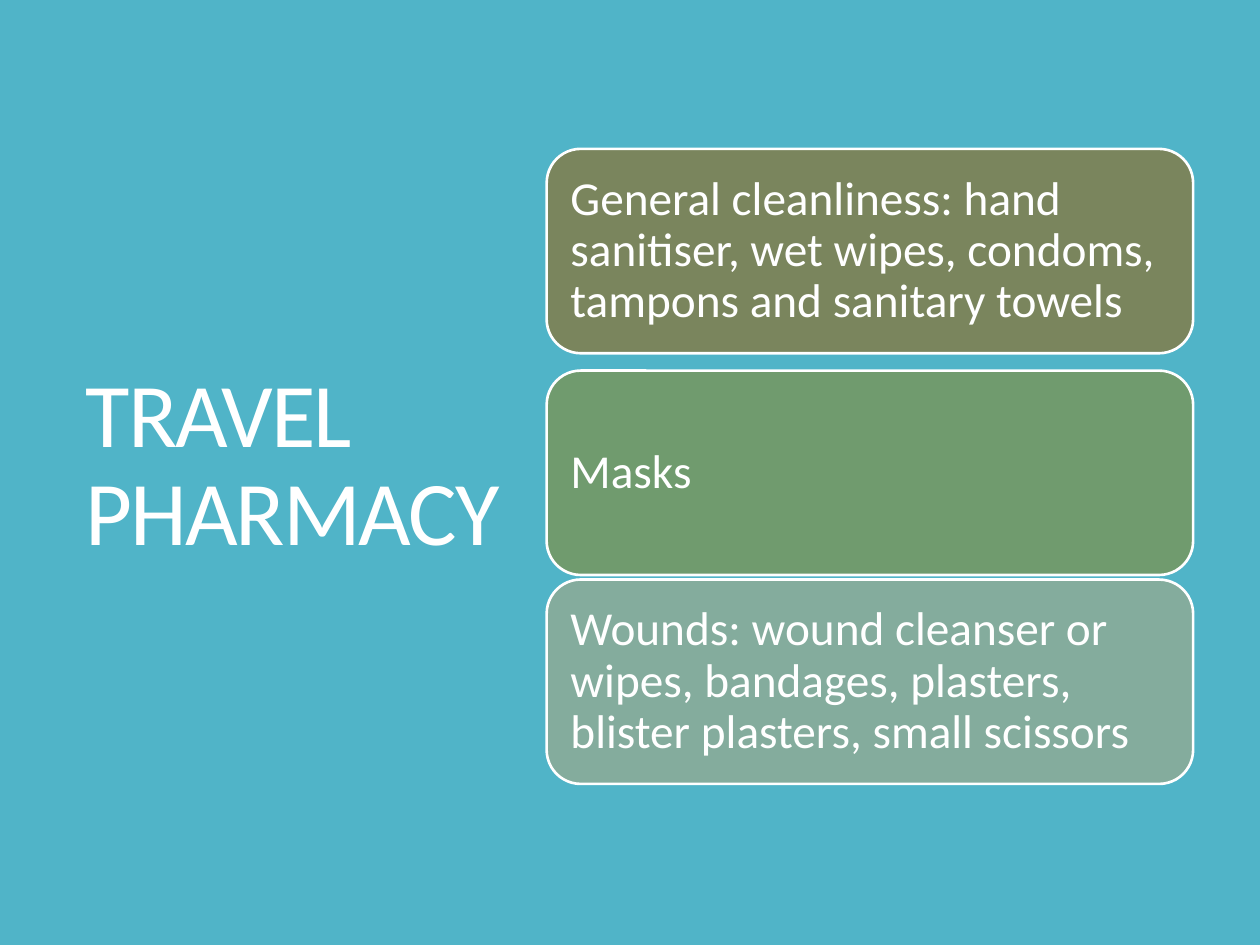
"""Build the travel pharmacy slide: a title beside three rounded cards."""
from dataclasses import dataclass

from pptx import Presentation
from pptx.dml.color import RGBColor
from pptx.enum.shapes import MSO_SHAPE
from pptx.enum.text import MSO_ANCHOR, PP_ALIGN
from pptx.util import Pt

ROUNDED = MSO_SHAPE.ROUNDED_RECTANGLE
MIDDLE = MSO_ANCHOR.MIDDLE
LEFT = PP_ALIGN.LEFT


@dataclass(frozen=True)
class Theme:
    font: str = "Calibri"
    background: str = "50B4C8"
    light: str = "FFFFFF"
    title_size: float = 52
    title_tracking: float = -1.2
    card_size: float = 27
    outline: float = 1.5
    line_spacing: float = 0.9


class SlideBuilder:
    def __init__(self, theme, page):
        self.theme = theme
        self.page = page

    def background(self):
        fill = self.page.background.fill
        fill.solid()
        fill.fore_color.rgb = RGBColor.from_string(self.theme.background)

    def set_text(self, box, text, size):
        frame = box.text_frame
        frame.word_wrap = True
        frame.vertical_anchor = MIDDLE
        para = frame.paragraphs[0]
        para.alignment = LEFT
        para.line_spacing = self.theme.line_spacing
        para.font.name = self.theme.font
        para.font.size = Pt(size)
        para.font.color.rgb = RGBColor.from_string(self.theme.light)
        span = para.add_run()
        span.text = text
        return span

    def title(self, text, left, top, width, height):
        box = self.page.shapes.add_textbox(Pt(left), Pt(top), Pt(width), Pt(height))
        span = self.set_text(box, text, self.theme.title_size)
        tracking = round(self.theme.title_tracking * 100)
        span._r.get_or_add_rPr().set("spc", str(tracking))

    def card(self, text, color, left, top, width, height, inset=7.9):
        box = self.page.shapes.add_shape(
            ROUNDED, Pt(left), Pt(top), Pt(width), Pt(height))
        box.shadow.inherit = False
        box.fill.solid()
        box.fill.fore_color.rgb = RGBColor.from_string(color)
        box.line.color.rgb = RGBColor.from_string(self.theme.light)
        box.line.width = Pt(self.theme.outline)
        frame = box.text_frame
        frame.margin_left = frame.margin_right = Pt(inset)
        frame.margin_top = frame.margin_bottom = Pt(inset)
        self.set_text(box, text, self.theme.card_size)


def main():
    deck = Presentation()
    deck.slide_width, deck.slide_height = Pt(720), Pt(540)
    page = deck.slides.add_slide(deck.slide_layouts[6])
    builder = SlideBuilder(Theme(), page)
    builder.background()
    builder.title("TRAVEL PHARMACY", 42, 50.4, 261.4, 432.7)

    cards = [
        (85.1, "7A855D", "General cleanliness: hand sanitiser, wet wipes, "
                         "condoms, tampons and sanitary towels"),
        (211.8, "709B6E", "Masks"),
        (331.2, "84AC9D", "Wounds: wound cleanser or wipes, bandages, plasters, "
                          "blister plasters, small scissors"),
    ]
    for top, color, text in cards:
        builder.card(text, color, 312.4, top, 369.4, 116.8)

    deck.save("out.pptx")


if __name__ == "__main__":
    main()
